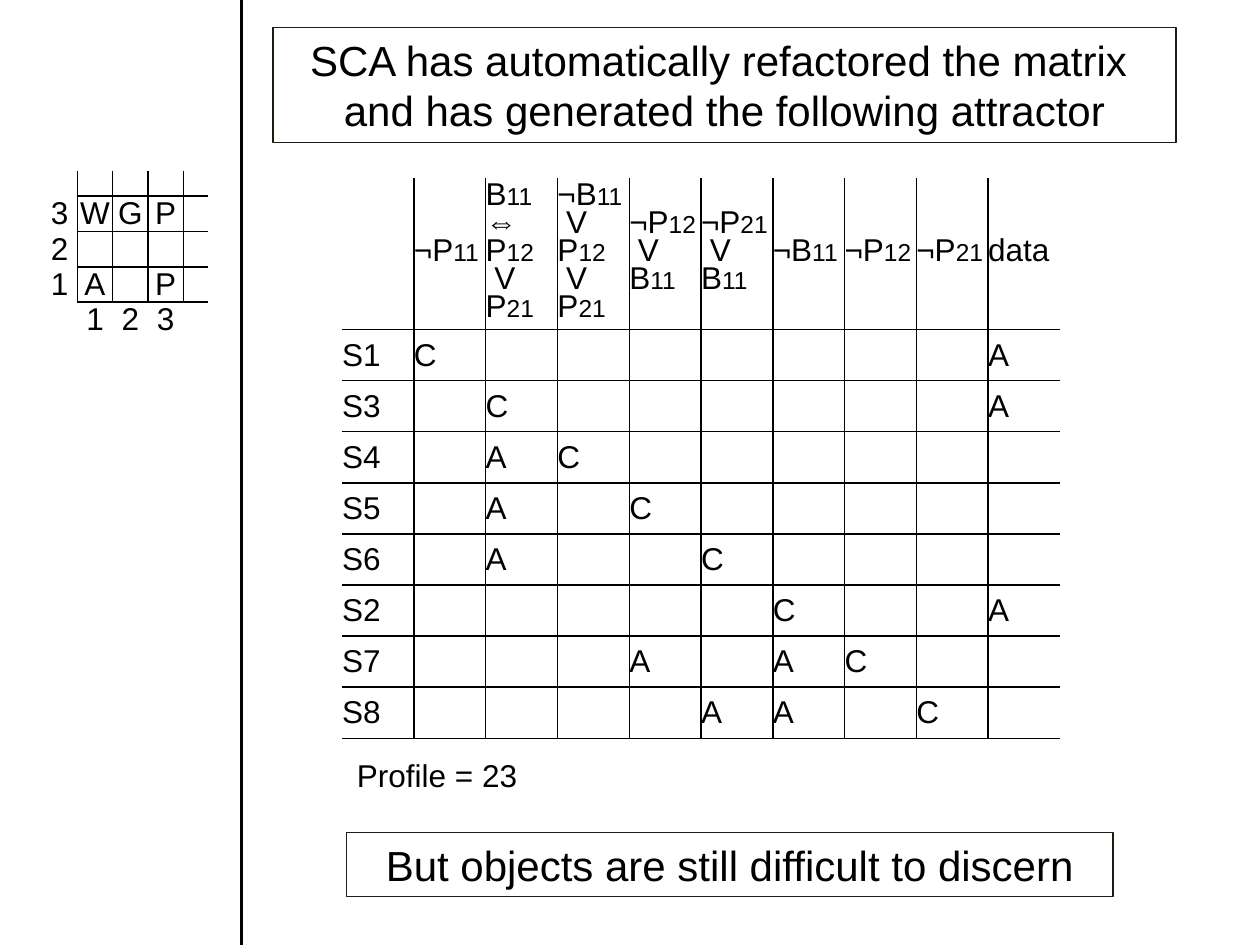
from lxml.etree import SubElement
from pptx import Presentation
from pptx.dml.color import RGBColor
from pptx.enum.shapes import MSO_CONNECTOR, MSO_SHAPE
from pptx.enum.text import MSO_ANCHOR, MSO_AUTO_SIZE, PP_ALIGN
from pptx.oxml.ns import qn
from pptx.util import Pt

# Content: "_" sets off the small index of a symbol
HEAD = ["", "¬P_11", "B_11\n⇔\nP_12\n V\nP_21", "¬B_11\n V\nP_12\n V\nP_21",
        "¬P_12\n V\nB_11", "¬P_21\n V\nB_11", "¬B_11", "¬P_12", "¬P_21", "data"]
MARKS = [  # row name, {column: mark}
    ("S1", {1: "C", 9: "A"}),
    ("S3", {2: "C", 9: "A"}),
    ("S4", {2: "A", 3: "C"}),
    ("S5", {2: "A", 4: "C"}),
    ("S6", {2: "A", 5: "C"}),
    ("S2", {6: "C", 9: "A"}),
    ("S7", {4: "A", 6: "A", 7: "C"}),
    ("S8", {5: "A", 6: "A", 8: "C"}),
]
WORLD = [
    ["", "", "", "", ""],
    ["3", "W", "G", "P", ""],
    ["2", "", "", "", ""],
    ["1", "A", "", "P", ""],
    ["", "1", "2", "3", ""],
]
TITLE = ("SCA has automatically refactored the matrix \n"
         "and has generated the following attractor")
NOTE = "But objects are still difficult to discern"
SCORE = "Profile = 23"
COLORS = {"ink": "000000", "frame": "1E1C11"}
FONT = "Arial"


def color(name):
    return RGBColor.from_string(COLORS[name])


def style(run, size):
    run.font.name = FONT
    run.font.size = Pt(size)
    run.font.color.rgb = color("ink")


def rule(cell, sides):
    """Draw the named sides of a cell and clear the others."""
    props = cell._tc.get_or_add_tcPr()
    for side in "LRTB":
        line = SubElement(props, qn("a:ln" + side), w=str(Pt(1)))
        if side in sides:
            fill = SubElement(line, qn("a:solidFill"))
            SubElement(fill, qn("a:srgbClr"), val=COLORS["ink"])
        else:
            SubElement(line, qn("a:noFill"))
    cell.fill.background()


def write(cell, text, align, lead):
    cell.margin_left = cell.margin_right = 0
    cell.margin_top = cell.margin_bottom = 0
    cell.vertical_anchor = MSO_ANCHOR.MIDDLE
    cell.text_frame.text = text
    for para in cell.text_frame.paragraphs:
        para.alignment = align
        if lead:
            para.line_spacing = Pt(lead)
        base, _, index = para.text.partition("_")
        if not base:  # keeps empty rows from growing
            SubElement(para._p, qn("a:endParaRPr"), sz="800")
            continue
        para.text = base
        style(para.runs[0], 18)
        if index:
            run = para.add_run()
            run.text = index
            style(run, 14)


def grid(shapes, left, top, wide, high, data, sides, align, lead=None):
    """Add a table; sides(row, col) names the ruled sides of a cell."""
    frame = shapes.add_table(len(high), len(wide), Pt(left), Pt(top),
                             Pt(sum(wide)), Pt(sum(high)))
    table = frame.table
    table.first_row = table.horz_banding = False
    for col, size in zip(table.columns, wide):
        col.width = Pt(size)
    for row, size in zip(table.rows, high):
        row.height = Pt(size)
    for r, line in enumerate(data):
        for c, text in enumerate(line):
            cell = table.cell(r, c)
            write(cell, text, align, lead if r == 0 else None)
            rule(cell, sides(r, c))


def pick(left, right, top, bottom):
    flags = zip("LRTB", (left, right, top, bottom))
    return "".join(side for side, on in flags if on)


def inner(r, c):
    """Open on the left, right and top."""
    return pick(c > 0, c < len(HEAD) - 1, r > 0, True)


def board(r, c):
    """Labels on the left and below stay outside the lines."""
    body = r < 4
    return pick(body and c > 0, body and c < 4, c > 0 and r > 0, c > 0 and body)


def box(shapes, left, top, wide, high, text):
    shape = shapes.add_shape(MSO_SHAPE.RECTANGLE, Pt(left), Pt(top), Pt(wide), Pt(high))
    shape.shadow.inherit = False
    shape.fill.background()
    shape.line.color.rgb = color("frame")
    shape.line.width = Pt(0.75)
    frame = shape.text_frame
    frame.text = text
    frame.word_wrap = True
    frame.auto_size = MSO_AUTO_SIZE.SHAPE_TO_FIT_TEXT
    frame.vertical_anchor = MSO_ANCHOR.MIDDLE
    for para in frame.paragraphs:
        para.alignment = PP_ALIGN.CENTER
        style(para.runs[0], 24)


def main():
    deck = Presentation()
    deck.slide_width, deck.slide_height = Pt(720), Pt(540)
    shapes = deck.slides.add_slide(deck.slide_layouts[6]).shapes

    # Matrix of clauses
    rows = [HEAD] + [[name] + [marks.get(c, "") for c in range(1, len(HEAD))]
                     for name, marks in MARKS]
    grid(shapes, 195.5, 101.9, [41.04] * len(HEAD), [86.4] + [29.2] * len(MARKS),
         rows, inner, PP_ALIGN.LEFT, lead=16)

    # Small world map
    grid(shapes, 24, 97.7, [20.2] * 4 + [14.4], [14.4] + [20.2] * 4,
         WORLD, board, PP_ALIGN.CENTER)

    # Title
    box(shapes, 156, 15.6, 516, 65.8, TITLE)

    # Divider
    line = shapes.add_connector(MSO_CONNECTOR.STRAIGHT, Pt(138), 0, Pt(138), Pt(540))
    line.line.color.rgb = color("ink")
    line.line.width = Pt(2)
    SubElement(line._element.spPr, qn("a:effectLst"))

    # Profile score
    frame = shapes.add_textbox(Pt(204), Pt(432), Pt(108), Pt(24)).text_frame
    frame.word_wrap = True
    frame.margin_left = frame.margin_right = 0
    frame.margin_top = frame.margin_bottom = 0
    frame.text = SCORE
    style(frame.paragraphs[0].runs[0], 18)

    # Closing remark
    box(shapes, 198, 475.8, 438, 36.4, NOTE)

    deck.save("out.pptx")


if __name__ == "__main__":
    main()
